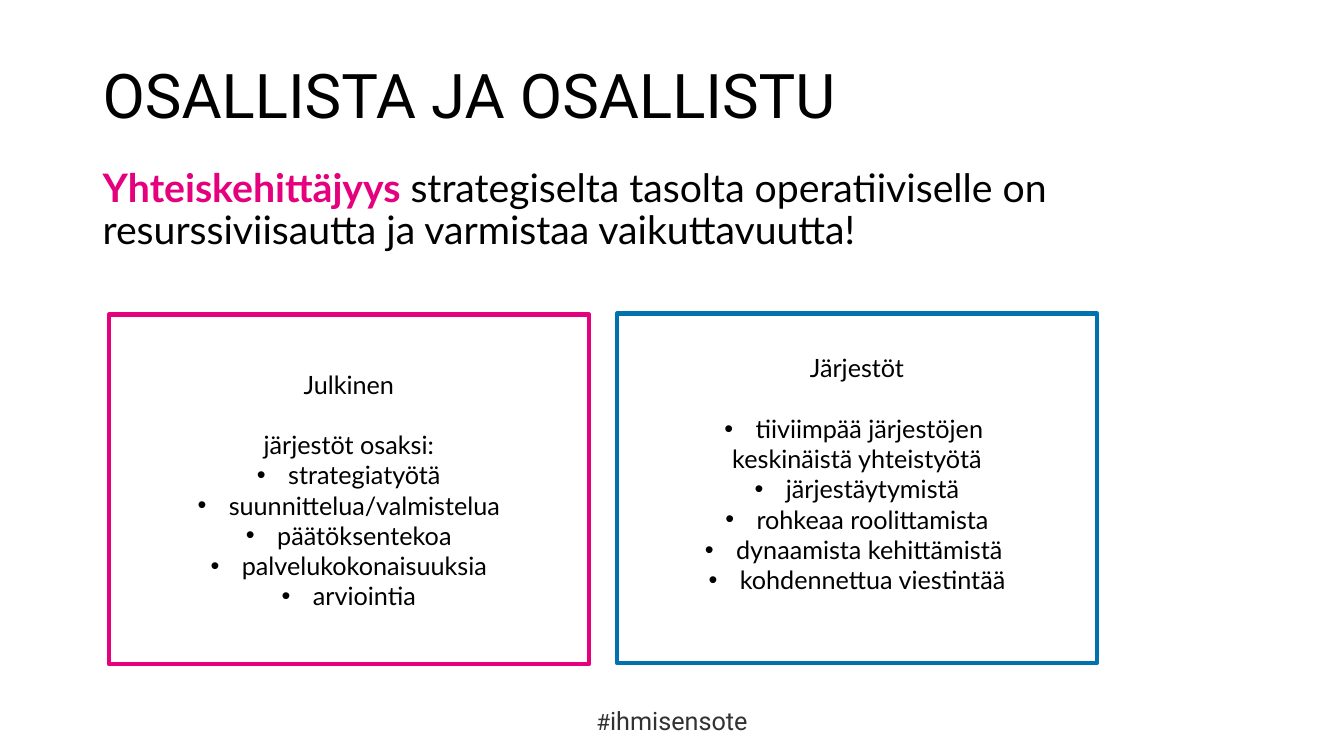
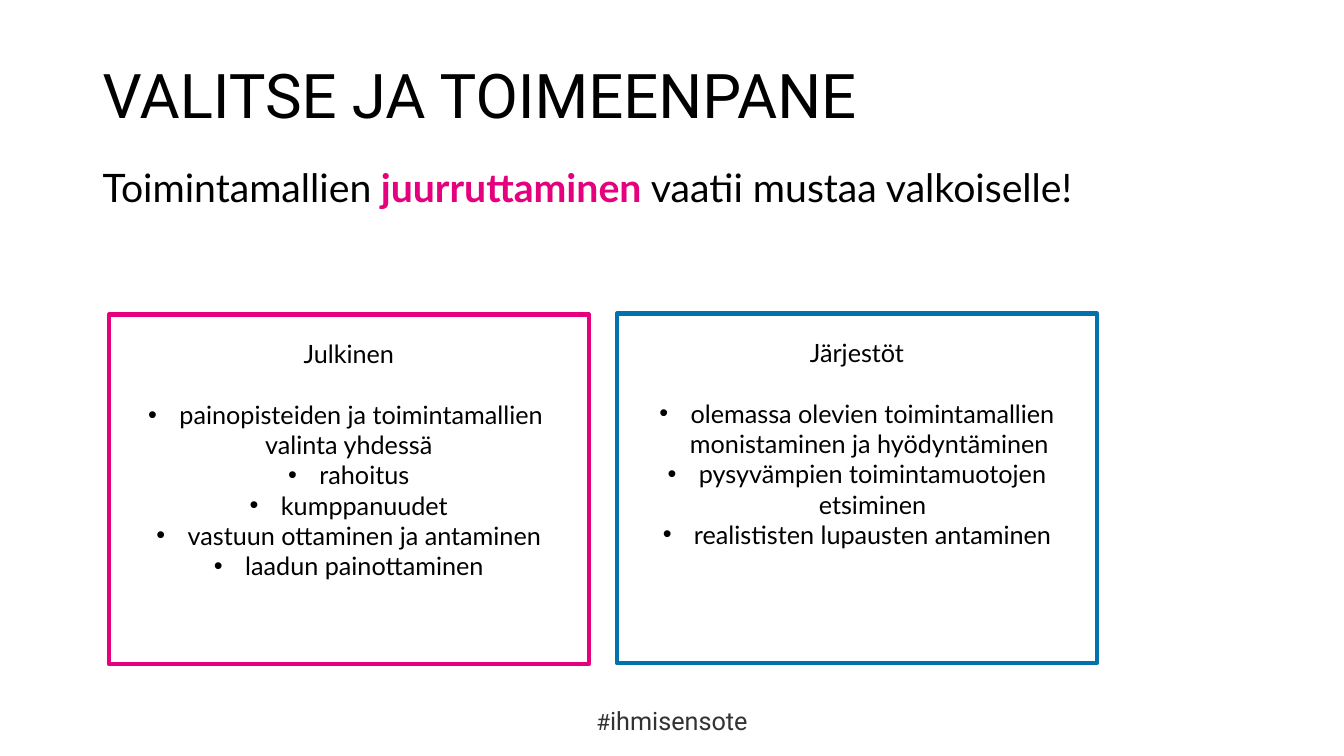
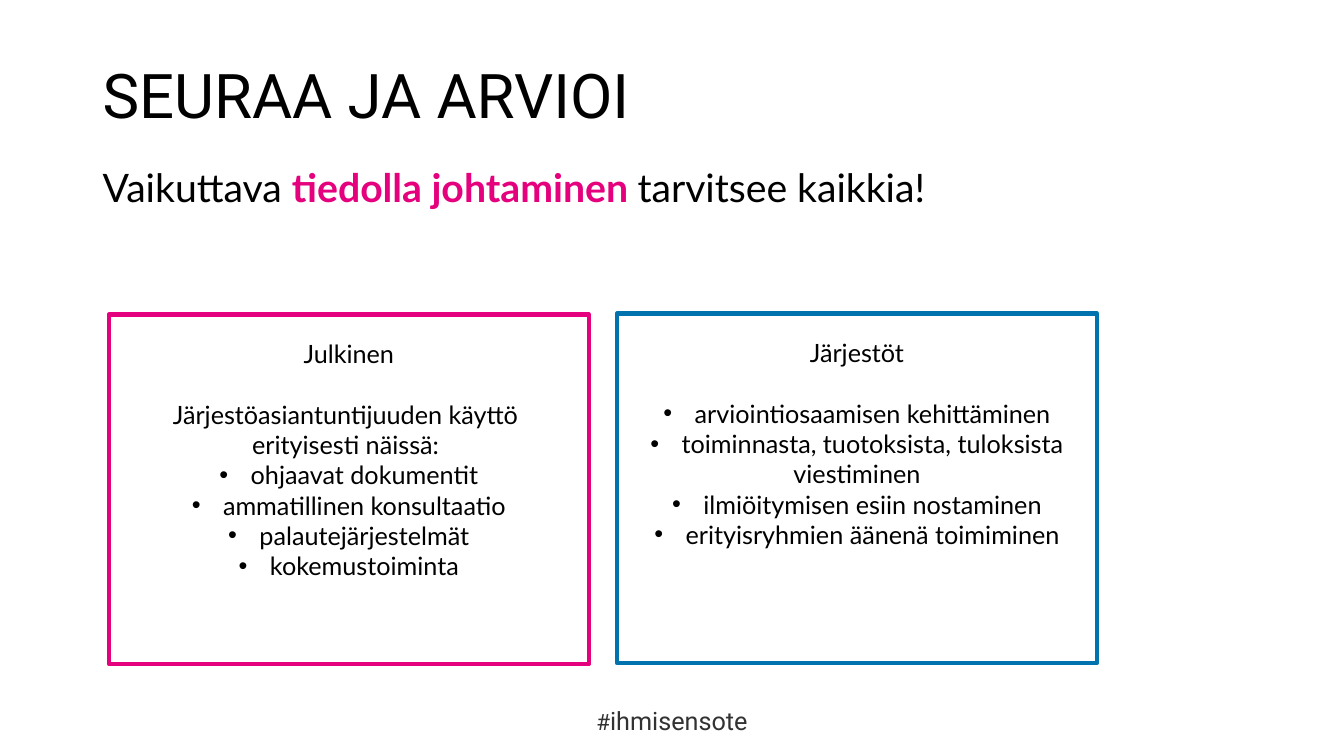
from dataclasses import dataclass

from lxml import etree
from pptx import Presentation
from pptx.dml.color import RGBColor
from pptx.enum.shapes import MSO_SHAPE
from pptx.enum.text import MSO_ANCHOR, PP_ALIGN
from pptx.oxml.ns import qn
from pptx.util import Inches, Pt

RECTANGLE = MSO_SHAPE.RECTANGLE
TOP, MIDDLE = MSO_ANCHOR.TOP, MSO_ANCHOR.MIDDLE
LEFT, CENTER = PP_ALIGN.LEFT, PP_ALIGN.CENTER


@dataclass(frozen=True)
class Theme:
    ink: str = "000000"
    grey: str = "323232"
    pink: str = "E5007D"
    blue: str = "0073AE"
    heading_font: str = "Roboto"
    body_font: str = "Lato"
    title_size: int = 44
    lead_size: int = 28
    panel_size: int = 18
    hash_size: int = 16
    tag_size: int = 18
    border: int = 3
    tight: float = 0.9
    panel_line: float = 0.3
    bullet_indent: float = 0.31


THEME = Theme()
BULLET = "• "

TITLE_BOX = (0.92, 0.51, 11.5, 0.93)
LEAD_BOX = (0.92, 1.62, 11.5, 4.76)
PUBLIC_BOX = (1.08, 3.12, 4.76, 3.47)
SOCIETY_BOX = (6.12, 3.11, 4.76, 3.47)
FOOTER_BOX = (4.41, 6.95, 4.51, 0.4)
PANEL_INSET = 0.24

# Lead: (text, highlighted) pairs. Panels: lines of drop from the top, then items.
PAGES = [
    {
        "title": "OSALLISTA JA OSALLISTU",
        "lead": [
            ("Yhteiskehittäjyys", True),
            (" strategiselta tasolta operatiiviselle on resurssiviisautta"
             " ja varmistaa vaikuttavuutta!", False),
        ],
        "public": (1, [
            "järjestöt osaksi:",
            "• strategiatyötä",
            "• suunnittelua/valmistelua",
            "• päätöksentekoa",
            "• palvelukokonaisuuksia",
            "• arviointia",
        ]),
        "society": (0.5, [
            "• tiiviimpää järjestöjen ",
            "keskinäistä yhteistyötä",
            "• järjestäytymistä",
            "• rohkeaa roolittamista",
            "• dynaamista kehittämistä ",
            "• kohdennettua viestintää",
        ]),
    },
    {
        "title": "VALITSE JA TOIMEENPANE",
        "lead": [
            ("Toimintamallien", False),
            (" juurruttaminen ", True),
            ("vaatii mustaa valkoiselle!", False),
        ],
        "public": (0, [
            "• painopisteiden ja toimintamallien ",
            "valinta yhdessä",
            "• rahoitus",
            "• kumppanuudet",
            "• vastuun ottaminen ja antaminen",
            "• laadun painottaminen",
        ]),
        "society": (0, [
            "• olemassa olevien toimintamallien monistaminen ja hyödyntäminen ",
            "• pysyvämpien toimintamuotojen etsiminen",
            "• realististen lupausten antaminen",
        ]),
    },
    {
        "title": "SEURAA JA ARVIOI",
        "lead": [
            ("Vaikuttava ", False),
            ("tiedolla johtaminen ", True),
            ("tarvitsee kaikkia!", False),
        ],
        "public": (0, [
            "Järjestöasiantuntijuuden käyttö ",
            "erityisesti näissä: ",
            "• ohjaavat dokumentit",
            "• ammatillinen konsultaatio",
            "• palautejärjestelmät",
            "• kokemustoiminta",
        ]),
        "society": (0, [
            "• arviointiosaamisen kehittäminen",
            "• toiminnasta, tuotoksista, tuloksista",
            "viestiminen",
            "• ilmiöitymisen esiin nostaminen",
            "• erityisryhmien äänenä toimiminen",
        ]),
    },
]


def add_span(para, text, *, size, font=THEME.body_font, color=THEME.ink, bold=False):
    span = para.add_run()
    span.text = text
    span.font.size = Pt(size)
    span.font.name = font
    span.font.bold = bold
    span.font.color.rgb = RGBColor.from_string(color)


def add_bullet(para):
    properties = para._p.get_or_add_pPr()
    indent = Inches(THEME.bullet_indent)
    properties.set("marL", str(indent))
    properties.set("indent", str(-indent))
    etree.SubElement(properties, qn("a:buFont")).set("typeface", "Arial")
    etree.SubElement(properties, qn("a:buChar")).set("char", BULLET.strip())


def add_text_box(page, box, *, anchor=TOP, align=LEFT, line_spacing=None):
    """Add a wrapping text box and return its first paragraph."""
    frame = page.shapes.add_textbox(*map(Inches, box)).text_frame
    frame.word_wrap = True
    frame.vertical_anchor = anchor
    para = frame.paragraphs[0]
    para.alignment = align
    para.line_spacing = line_spacing
    return para


def add_title(page, box, text):
    para = add_text_box(page, box, anchor=MIDDLE, line_spacing=THEME.tight)
    add_span(para, text, size=THEME.title_size, font=THEME.heading_font)


def add_lead(page, box, parts):
    para = add_text_box(page, box, line_spacing=THEME.tight)
    for text, highlighted in parts:
        color = THEME.pink if highlighted else THEME.ink
        add_span(para, text, size=THEME.lead_size, color=color, bold=highlighted)


def add_panel(page, box, heading, content, color):
    """Add an outlined box with a heading above centred items."""
    drop, items = content
    panel = page.shapes.add_shape(RECTANGLE, *map(Inches, box))
    panel.shadow.inherit = False
    panel.fill.background()
    panel.line.color.rgb = RGBColor.from_string(color)
    panel.line.width = Pt(THEME.border)

    frame = panel.text_frame
    frame.word_wrap = True
    frame.vertical_anchor = TOP
    frame.margin_top = Inches(PANEL_INSET + drop * THEME.panel_line)
    para = frame.paragraphs[0]
    para.alignment = CENTER
    para.space_after = Inches(THEME.panel_line)
    add_span(para, heading, size=THEME.panel_size)
    for item in items:
        para = frame.add_paragraph()
        para.alignment = CENTER
        if item.startswith(BULLET):
            add_bullet(para)
        add_span(para, item.removeprefix(BULLET), size=THEME.panel_size)


def add_footer(page, box):
    para = add_text_box(page, box, align=CENTER)
    for text, size in (("#", THEME.hash_size), ("ihmisensote", THEME.tag_size)):
        add_span(para, text, size=size, font=THEME.heading_font, color=THEME.grey)


def add_page(deck, content):
    page = deck.slides.add_slide(deck.slide_layouts[6])
    add_footer(page, FOOTER_BOX)
    add_title(page, TITLE_BOX, content["title"])
    add_lead(page, LEAD_BOX, content["lead"])
    add_panel(page, PUBLIC_BOX, "Julkinen", content["public"], THEME.pink)
    add_panel(page, SOCIETY_BOX, "Järjestöt", content["society"], THEME.blue)


def main():
    deck = Presentation()
    deck.slide_width = Inches(13.33)
    deck.slide_height = Inches(7.5)
    for content in PAGES:
        add_page(deck, content)
    deck.save("out.pptx")


if __name__ == "__main__":
    main()
